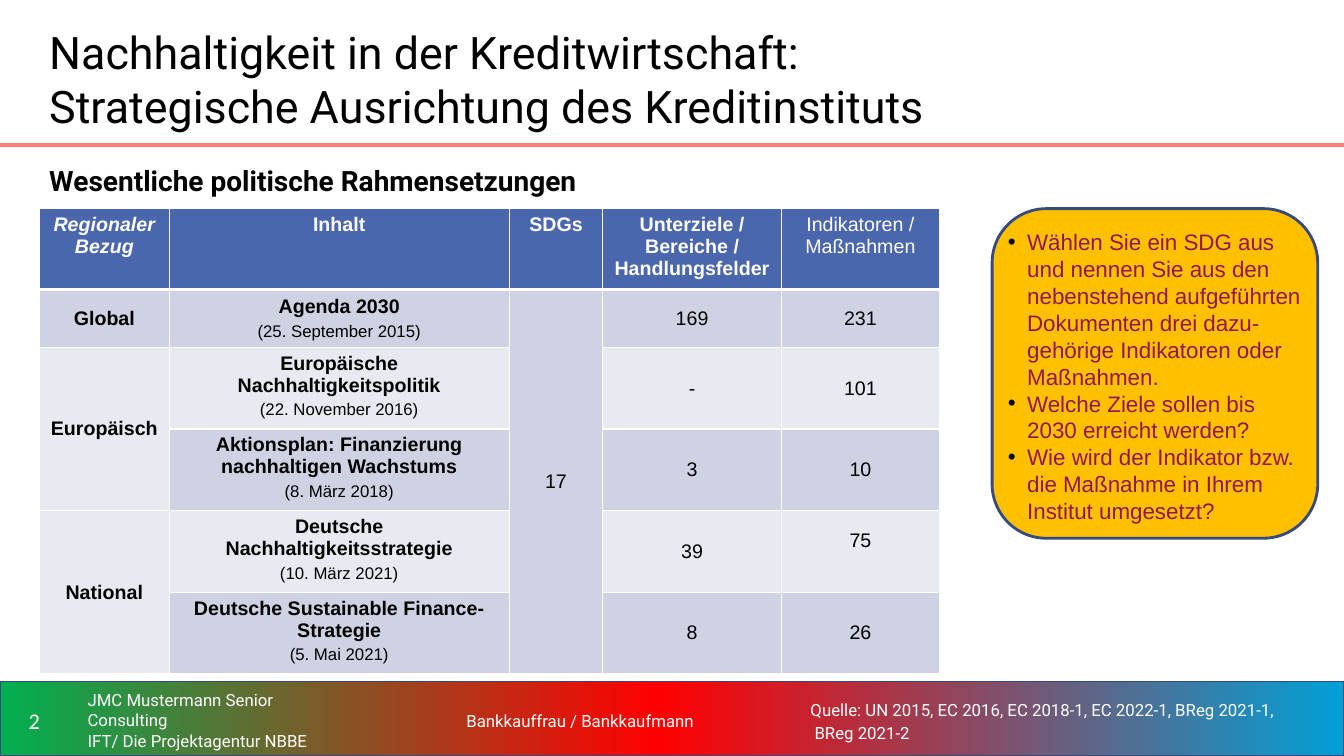
from copy import deepcopy

from lxml import etree
from pptx import Presentation
from pptx.dml.color import RGBColor
from pptx.enum.shapes import MSO_SHAPE as SHAPE
from pptx.enum.text import MSO_ANCHOR as ANCHOR, PP_ALIGN as ALIGN
from pptx.oxml.ns import qn
from pptx.util import Inches, Pt

BLACK = RGBColor(0x00, 0x00, 0x00)
WHITE = RGBColor(0xFF, 0xFF, 0xFF)
GREEN = RGBColor(0x00, 0xB0, 0x50)
RED = RGBColor(0xFF, 0x00, 0x00)
CYAN = RGBColor(0x01, 0xA0, 0xD6)
SALMON = RGBColor(0xFF, 0x7E, 0x79)
AMBER = RGBColor(0xFF, 0xC0, 0x00)
PLUM = RGBColor(0x94, 0x16, 0x51)
NAVY = RGBColor(0x36, 0x4A, 0x7D)
HEADER = RGBColor(0x4A, 0x66, 0xAC)
DARK_BAND = RGBColor(0xCE, 0xD2, 0xE2)
LIGHT_BAND = RGBColor(0xE8, 0xEA, 0xF1)


class SlideBuilder:
    heading_font = "Roboto"
    body_font = "Arial"

    def __init__(self, slide):
        self.s = slide

    def format(self, p, size, color, font, bold=False, italic=False, align=None):
        p.alignment = align
        for r in p.runs:
            r.font.size, r.font.name = Pt(size), font
            r.font.color.rgb = color
            r.font.bold, r.font.italic = bold, italic

    def shape(self, kind, box, color=None, line=None, width=1):
        sp = self.s.shapes.add_shape(kind, *map(Inches, box))
        sp.shadow.inherit = False
        if color is not None:
            sp.fill.solid()
            sp.fill.fore_color.rgb = color
        if line is None:
            sp.line.fill.background()
        else:
            sp.line.color.rgb, sp.line.width = line, Pt(width)
        return sp

    def gradient_bar(self, box, stops, line):
        sp = self.shape(SHAPE.RECTANGLE, box, line=line)
        sp.fill.gradient()
        sp.fill.gradient_angle = 0
        gs_list = sp._element.spPr.find(".//" + qn("a:gsLst"))
        while len(gs_list) < len(stops):
            gs_list.append(deepcopy(gs_list[0]))
        for stop, (position, color) in zip(sp.fill.gradient_stops, stops):
            stop.position, stop.color.rgb = position, color

    def text(self, box, text, size, color, font=heading_font, bold=False,
             align=None, anchor=ANCHOR.TOP, spacing=None):
        tf = self.s.shapes.add_textbox(*map(Inches, box)).text_frame
        tf.word_wrap, tf.vertical_anchor = True, anchor
        p = tf.paragraphs[0]
        p.text, p.line_spacing = text, spacing
        self.format(p, size, color, font, bold, align=align)
        return p

    def indent(self, p, inches):
        pPr = p._p.get_or_add_pPr()
        pPr.set("marL", str(Inches(inches)))
        pPr.set("indent", str(-Inches(inches)))
        return pPr

    def task_box(self, box, tasks):
        sp = self.shape(SHAPE.ROUNDED_RECTANGLE, box, AMBER, NAVY, 2)
        tf = sp.text_frame
        tf.word_wrap, tf.vertical_anchor = True, ANCHOR.TOP
        tf.margin_left = tf.margin_right = tf.margin_bottom = 0
        tf.margin_top = Inches(0.04)
        for i, task in enumerate(tasks):
            p = tf.add_paragraph() if i else tf.paragraphs[0]
            p.text = task
            pPr = self.indent(p, 0.19)
            bullet_color = etree.SubElement(pPr, qn("a:buClr"))
            etree.SubElement(bullet_color, qn("a:srgbClr"), val=str(BLACK))
            etree.SubElement(pPr, qn("a:buFont"), typeface="Arial")
            etree.SubElement(pPr, qn("a:buChar"), char="•")
            self.format(p, 16, PLUM, self.body_font, align=ALIGN.LEFT)

    def borders(self, cell, top, bottom):
        tcPr = cell._tc.get_or_add_tcPr()
        widths = (("a:lnL", 1), ("a:lnR", 1), ("a:lnT", top), ("a:lnB", bottom))
        for i, (tag, width) in enumerate(widths):
            ln = etree.Element(qn(tag), w=str(Pt(width)))
            fill = etree.SubElement(ln, qn("a:solidFill"))
            etree.SubElement(fill, qn("a:srgbClr"), val=str(WHITE))
            tcPr.insert(i, ln)

    def cell(self, cell, lines, fill, color, bold, italic=False, anchor=ANCHOR.MIDDLE):
        cell.fill.solid()
        cell.fill.fore_color.rgb = fill
        cell.vertical_anchor = anchor
        tf = cell.text_frame
        tf.text = lines[0]
        self.format(tf.paragraphs[0], 14, color, self.body_font, bold, italic, ALIGN.CENTER)
        for line in lines[1:]:
            p = tf.add_paragraph()
            p.text, p.space_before = line, Pt(3)
            self.format(p, 12, color, self.body_font, align=ALIGN.CENTER)

    def table(self, left, top, widths, heights, header, rows, merges):
        frame = self.s.shapes.add_table(len(heights), len(widths), Inches(left), Inches(top),
                                        Inches(sum(widths)), Inches(sum(heights)))
        table = frame.table
        table.first_row = table.horz_banding = False
        for column, width in zip(table.columns, widths):
            column.width = Inches(width)
        for row, height in zip(table.rows, heights):
            row.height = Inches(height)
        for c, label in enumerate(header):
            self.cell(table.cell(0, c), [label], HEADER, WHITE, bold=c < 4,
                      italic=c == 0, anchor=ANCHOR.TOP)
        for r, row in enumerate(rows, 1):
            band = DARK_BAND if r % 2 else LIGHT_BAND
            for c, lines in enumerate(row):
                # The region column keeps the light band below the first row
                fill = LIGHT_BAND if c == 0 and r > 1 else band
                anchor = ANCHOR.TOP if c == 1 and r > 1 else ANCHOR.MIDDLE
                self.cell(table.cell(r, c), lines, fill, BLACK, bold=c < 2, anchor=anchor)
        for r in range(len(heights)):
            for c in range(len(widths)):
                self.borders(table.cell(r, c), 3 if r == 1 else 1, 3 if r == 0 else 1)
        for first, last, c in merges:
            table.cell(first, c).merge(table.cell(last, c))
        return table


def main():
    prs = Presentation()
    prs.slide_width, prs.slide_height = Inches(13.33), Inches(7.5)
    b = SlideBuilder(prs.slides.add_slide(prs.slide_layouts[6]))

    # Bars
    b.gradient_bar((0, 6.76, 13.33, 0.74), ((0, GREEN), (0.49, RED), (1, CYAN)), NAVY)
    b.shape(SHAPE.RECTANGLE, (0, 1.42, 13.33, 0.04), SALMON)

    # Title and subtitle
    b.text((0.39, 0.2, 12.6, 1.18), "Nachhaltigkeit in der Kreditwirtschaft:\v"
           "Strategische Ausrichtung des Kreditinstituts", 32, BLACK)
    b.text((0.39, 1.57, 12.6, 0.44), "Wesentliche politische Rahmensetzungen",
           20, BLACK, bold=True)

    # Table of policy frameworks
    header = ("Regionaler Bezug", "Inhalt", "SDGs",
              "Unterziele / Bereiche / Handlungsfelder", "Indikatoren / Maßnahmen")
    rows = (
        (["Global"], ["Agenda 2030", "(25. September 2015)"], ["17"], ["169"], ["231"]),
        (["Europäisch"], ["Europäische Nachhaltigkeitspolitik", "(22. November 2016)"],
         [""], ["-"], ["101"]),
        ([""], ["Aktionsplan: Finanzierung nachhaltigen Wachstums", "(8. März 2018)"],
         [""], ["3"], ["10"]),
        (["National"], ["Deutsche Nachhaltigkeitsstrategie", "(10. März 2021)"],
         [""], ["39"], ["75"]),
        ([""], ["Deutsche Sustainable Finance-Strategie", "(5. Mai 2021)"],
         [""], ["8"], ["26"]),
    )
    table = b.table(0.39, 2.07, (1.29, 3.37, 0.93, 1.77, 1.57), [0.8, 0.57] + [0.81] * 4,
                    header, rows, merges=((1, 5, 2), (2, 3, 0), (4, 5, 0)))
    table.cell(4, 4).margin_bottom = Inches(0.27)

    # Task box
    b.task_box((9.84, 2.07, 3.23, 3.27), (
        "Wählen Sie ein SDG aus und nennen Sie aus den nebenstehend aufgeführten "
        "Dokumenten drei dazu-gehörige Indikatoren oder Maßnahmen.",
        "Welche Ziele sollen bis 2030 erreicht werden?",
        "Wie wird der Indikator bzw. die Maßnahme in Ihrem Institut umgesetzt?"))

    # Footer
    b.text((0, 6.84, 0.68, 0.61), "2", 16, WHITE, "Calibri",
           align=ALIGN.CENTER, anchor=ANCHOR.MIDDLE)
    b.text((0.77, 6.84, 2.78, 0.61), "JMC Mustermann Senior Consulting\v"
           "IFT/ Die Projektagentur NBBE", 12, WHITE, anchor=ANCHOR.MIDDLE)
    b.text((3.66, 6.84, 4.19, 0.61), "Bankkauffrau / Bankkaufmann", 12, WHITE,
           align=ALIGN.CENTER, anchor=ANCHOR.MIDDLE, spacing=1.1)
    sources = b.text((7.94, 6.84, 5.05, 0.61), "Quelle: UN 2015, EC 2016, EC 2018-1, "
                     "EC 2022-1, BReg 2021-1, BReg 2021-2", 12, WHITE,
                     anchor=ANCHOR.MIDDLE, spacing=1.1)
    b.indent(sources, 0.04)

    prs.save("out.pptx")


if __name__ == "__main__":
    main()
